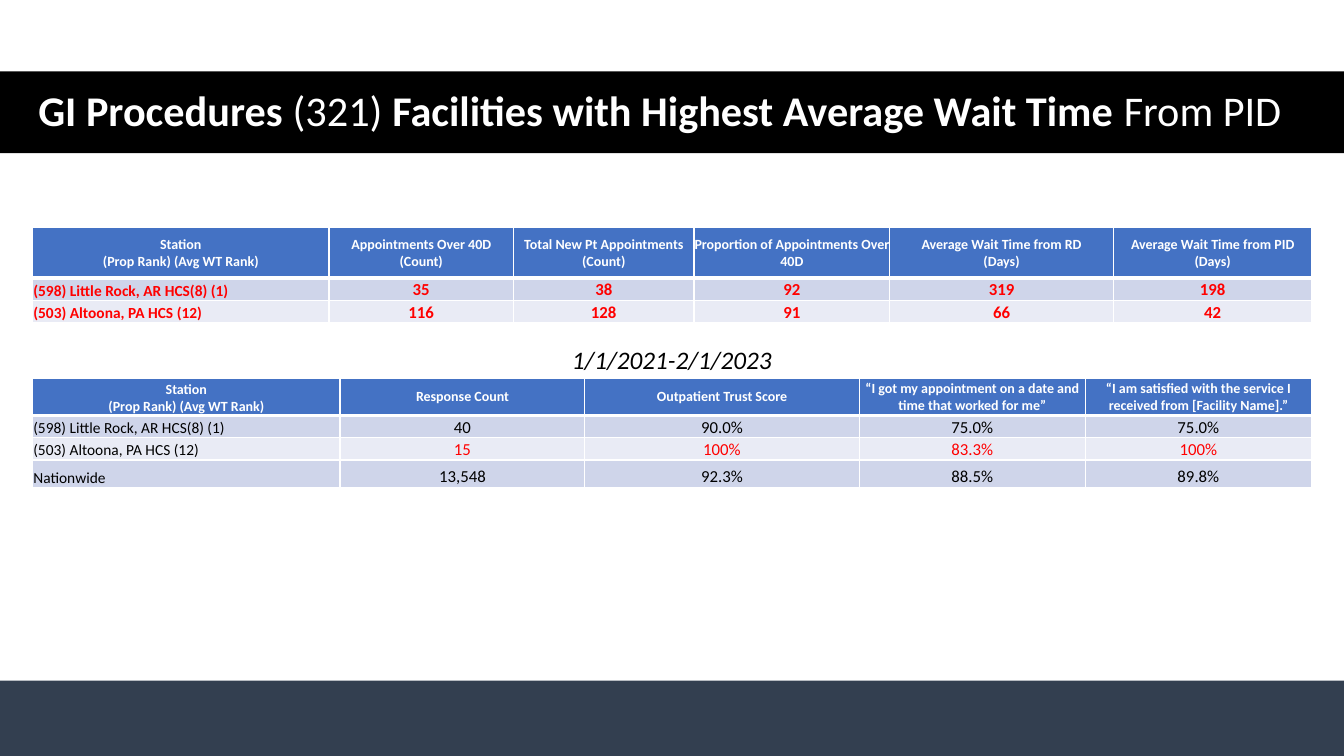
from dataclasses import dataclass

from lxml.etree import SubElement
from pptx import Presentation
from pptx.dml.color import RGBColor
from pptx.enum.shapes import MSO_SHAPE
from pptx.enum.text import MSO_ANCHOR as Anchor, MSO_AUTO_SIZE as AutoSize, PP_ALIGN as Align
from pptx.oxml.ns import qn
from pptx.util import Cm, Pt

WHITE, BLACK, RED = "FFFFFF", "000000", "FF0000"
HEADER_BLUE, BAND_DARK, BAND_LIGHT = "4472C4", "CFD5EA", "E9EBF5"
FOOTER_BLUE = "333F50"
SLIDE_WIDTH, SLIDE_HEIGHT = 33.87, 19.05
TABLE_LEFT = 0.82


@dataclass
class DataRow:
    station: str
    values: list[str]
    station_color: str = BLACK
    value_color: str = BLACK
    height: float = 0.56


@dataclass
class StationTable:
    top: float
    widths: list[float]
    header_height: float
    headers: list[str]
    rows: list[DataRow]
    bold: bool = False
    station_anchor: Anchor = Anchor.MIDDLE


STATION_HEADER = "Station\n(Prop Rank) (Avg WT Rank)"
LITTLE_ROCK = "(598) Little Rock, AR HCS(8) (1)"
ALTOONA = "(503) Altoona, PA HCS (12)"

WAIT_TIMES = StationTable(
    top=5.74,
    widths=[7.47, 4.65, 4.55, 4.93, 5.64, 5],
    header_height=1.27,
    headers=[
        STATION_HEADER,
        "Appointments Over 40D\n(Count)",
        "Total New Pt Appointments\n(Count)",
        "Proportion of Appointments Over 40D",
        "Average Wait Time from RD\n(Days)",
        "Average Wait Time from PID\n(Days)",
    ],
    rows=[
        DataRow(LITTLE_ROCK, ["35", "38", "92", "319", "198"], RED, RED),
        DataRow(ALTOONA, ["116", "128", "91", "66", "42"], RED, RED),
    ],
    bold=True,
)
TRUST_SCORES = StationTable(
    top=9.53,
    widths=[7.75, 6.17, 6.91, 5.7, 5.7],
    header_height=0.94,
    headers=[
        STATION_HEADER,
        "Response Count",
        "Outpatient Trust Score",
        "“I got my appointment on a date and time that worked for me”",
        "“I am satisfied with the service I received from [Facility Name].”",
    ],
    rows=[
        DataRow(LITTLE_ROCK, ["40", "90.0%", "75.0%", "75.0%"]),
        DataRow(ALTOONA, ["15", "100%", "83.3%", "100%"], value_color=RED),
        DataRow("Nationwide", ["13,548", "92.3%", "88.5%", "89.8%"], height=0.69),
    ],
    station_anchor=Anchor.BOTTOM,
)
TITLE_SPANS = [
    ("GI Procedures ", True),
    ("(321) ", False),
    ("Facilities with Highest Average Wait Time ", True),
    ("From PID", False),
]


def rgb(color: str) -> RGBColor:
    return RGBColor.from_string(color)


def style_font(font, size: float, color: str, bold: bool = False, italic: bool = False) -> None:
    font.name = "Calibri"
    font.size = Pt(size)
    font.bold = bold
    font.italic = italic
    font.color.rgb = rgb(color)


def add_bar(page, top: float, height: float, color: str):
    bar = page.shapes.add_shape(MSO_SHAPE.RECTANGLE, 0, Cm(top), Cm(SLIDE_WIDTH), Cm(height))
    bar.shadow.inherit = False
    bar.fill.solid()
    bar.fill.fore_color.rgb = rgb(color)
    bar.line.fill.background()
    return bar


def add_borders(cell, bottom_width: float) -> None:
    """Draw white cell borders; call before the fill is set."""
    properties = cell._tc.get_or_add_tcPr()
    for side, width in (("L", 1), ("R", 1), ("T", 1), ("B", bottom_width)):
        line = SubElement(properties, qn(f"a:ln{side}"), w=str(Pt(width)))
        fill = SubElement(line, qn("a:solidFill"))
        SubElement(fill, qn("a:srgbClr"), val=WHITE)


def fill_cell(cell, text: str, size: float, color: str, fill: str, bold: bool,
              align: Align = Align.CENTER, anchor: Anchor = Anchor.BOTTOM,
              bottom_border: float = 1) -> None:
    add_borders(cell, bottom_border)
    cell.fill.solid()
    cell.fill.fore_color.rgb = rgb(fill)
    cell.vertical_anchor = anchor
    margin = Cm(0.02) if anchor == Anchor.BOTTOM else 0
    cell.margin_left = cell.margin_right = cell.margin_top = margin
    cell.margin_bottom = 0
    para = cell.text_frame.paragraphs[0]
    para.text = text
    para.alignment = align
    for span in para.runs:
        style_font(span.font, size, color, bold)


def add_station_table(page, content: StationTable) -> None:
    heights = [content.header_height] + [row.height for row in content.rows]
    table = page.shapes.add_table(
        len(heights), len(content.widths), Cm(TABLE_LEFT), Cm(content.top),
        Cm(sum(content.widths)), Cm(sum(heights)),
    ).table
    table.horz_banding = False
    for column, width in zip(table.columns, content.widths):
        column.width = Cm(width)
    for table_row, height in zip(table.rows, heights):
        table_row.height = Cm(height)

    for index, header in enumerate(content.headers):
        anchor = Anchor.MIDDLE if index else content.station_anchor
        fill_cell(table.cell(0, index), header, 10, WHITE, HEADER_BLUE, True,
                  anchor=anchor, bottom_border=3)
    for index, row in enumerate(content.rows, start=1):
        band = BAND_DARK if index % 2 else BAND_LIGHT
        fill_cell(table.cell(index, 0), row.station, 11, row.station_color, band,
                  content.bold, align=Align.LEFT)
        for column, value in enumerate(row.values, start=1):
            fill_cell(table.cell(index, column), value, 12, row.value_color, band, content.bold)


def add_title(page) -> None:
    title = page.shapes.title
    title.left, title.top, title.width, title.height = Cm(0.71), Cm(1.47), Cm(32.46), Cm(2.72)
    frame = title.text_frame
    frame.word_wrap = True
    frame.auto_size = AutoSize.NONE
    frame.vertical_anchor = Anchor.MIDDLE
    para = frame.paragraphs[0]
    para.alignment = Align.LEFT
    para.line_spacing = 0.9
    for text, bold in TITLE_SPANS:
        span = para.add_run()
        span.text = text
        style_font(span.font, 30.2, WHITE, bold)
    title_bar = add_bar(page, 1.8, 2.06, BLACK)
    title.element.addprevious(title_bar.element)


def add_period(page) -> None:
    box = page.shapes.add_textbox(Cm(8.46), Cm(8.56), Cm(16.94), Cm(1.02))
    box.text_frame.word_wrap = True
    para = box.text_frame.paragraphs[0]
    para.text = "1/1/2021-2/1/2023"
    para.alignment = Align.CENTER
    style_font(para.runs[0].font, 18, BLACK, italic=True)


def main() -> None:
    deck = Presentation()
    deck.slide_width, deck.slide_height = Cm(SLIDE_WIDTH), Cm(SLIDE_HEIGHT)
    page = deck.slides.add_slide(deck.slide_layouts.get_by_name("Title Only"))
    footer_top = 17.15
    add_bar(page, footer_top, SLIDE_HEIGHT - footer_top, FOOTER_BLUE)
    add_title(page)
    for content in (WAIT_TIMES, TRUST_SCORES):
        add_station_table(page, content)
    add_period(page)
    deck.save("out.pptx")


if __name__ == "__main__":
    main()
